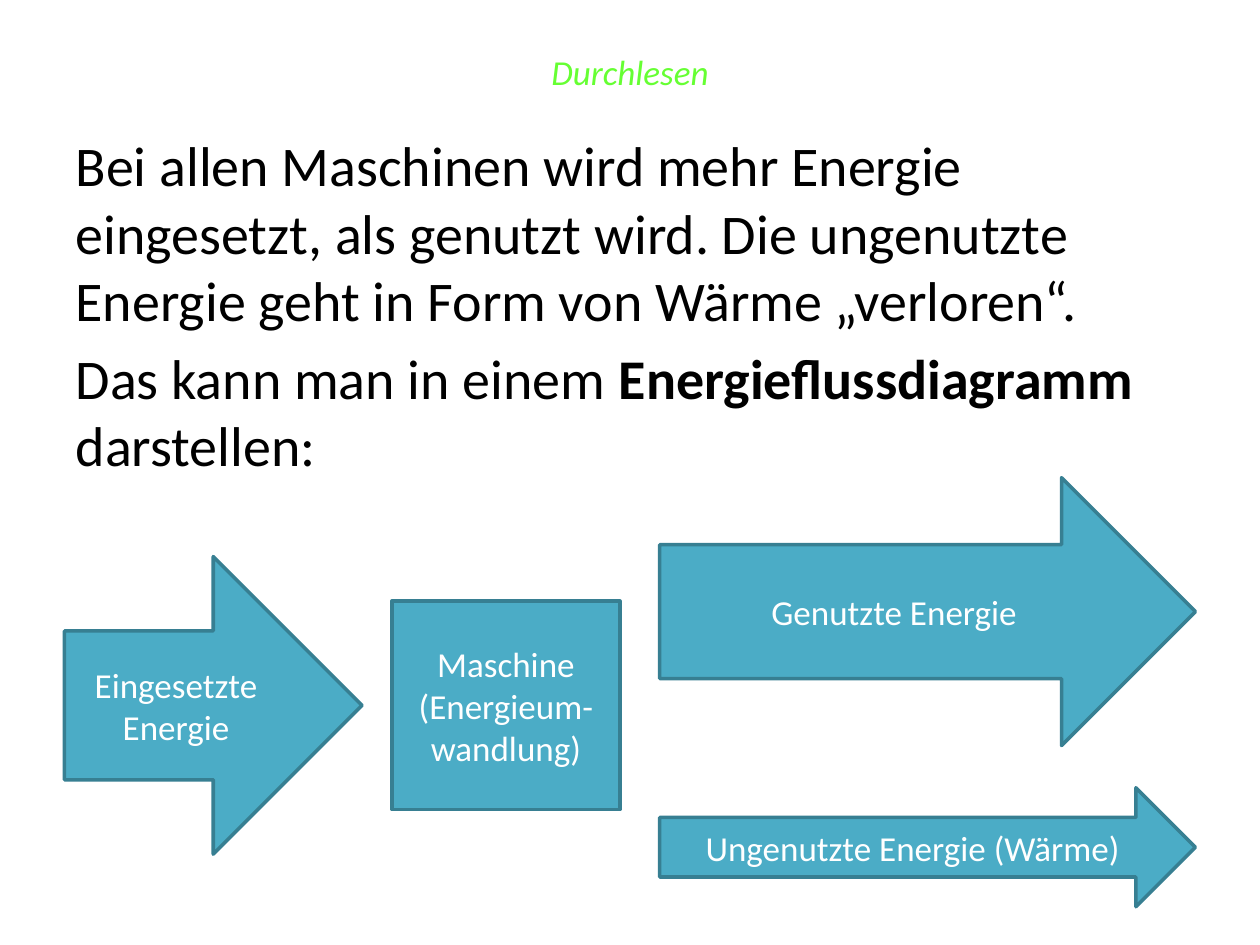
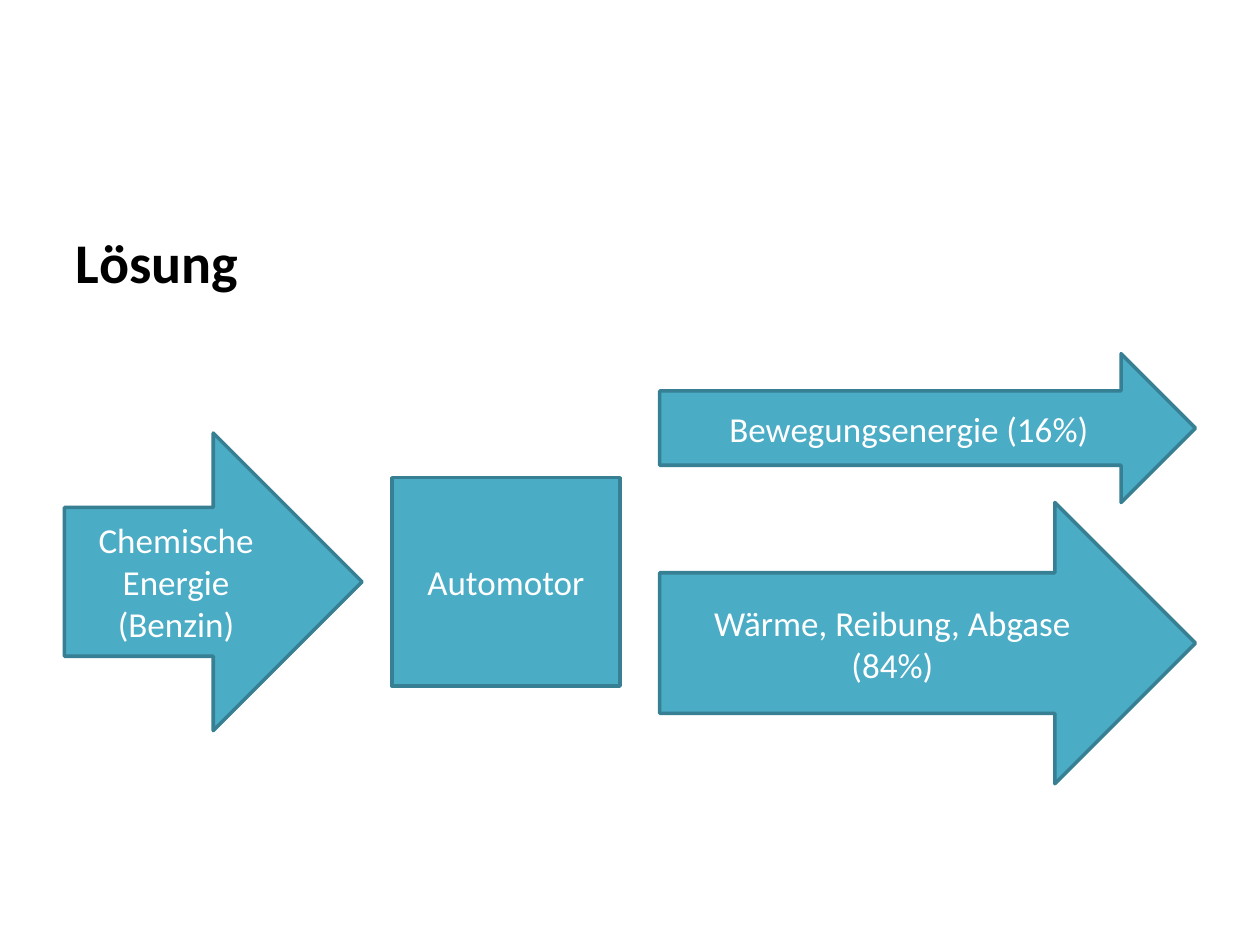
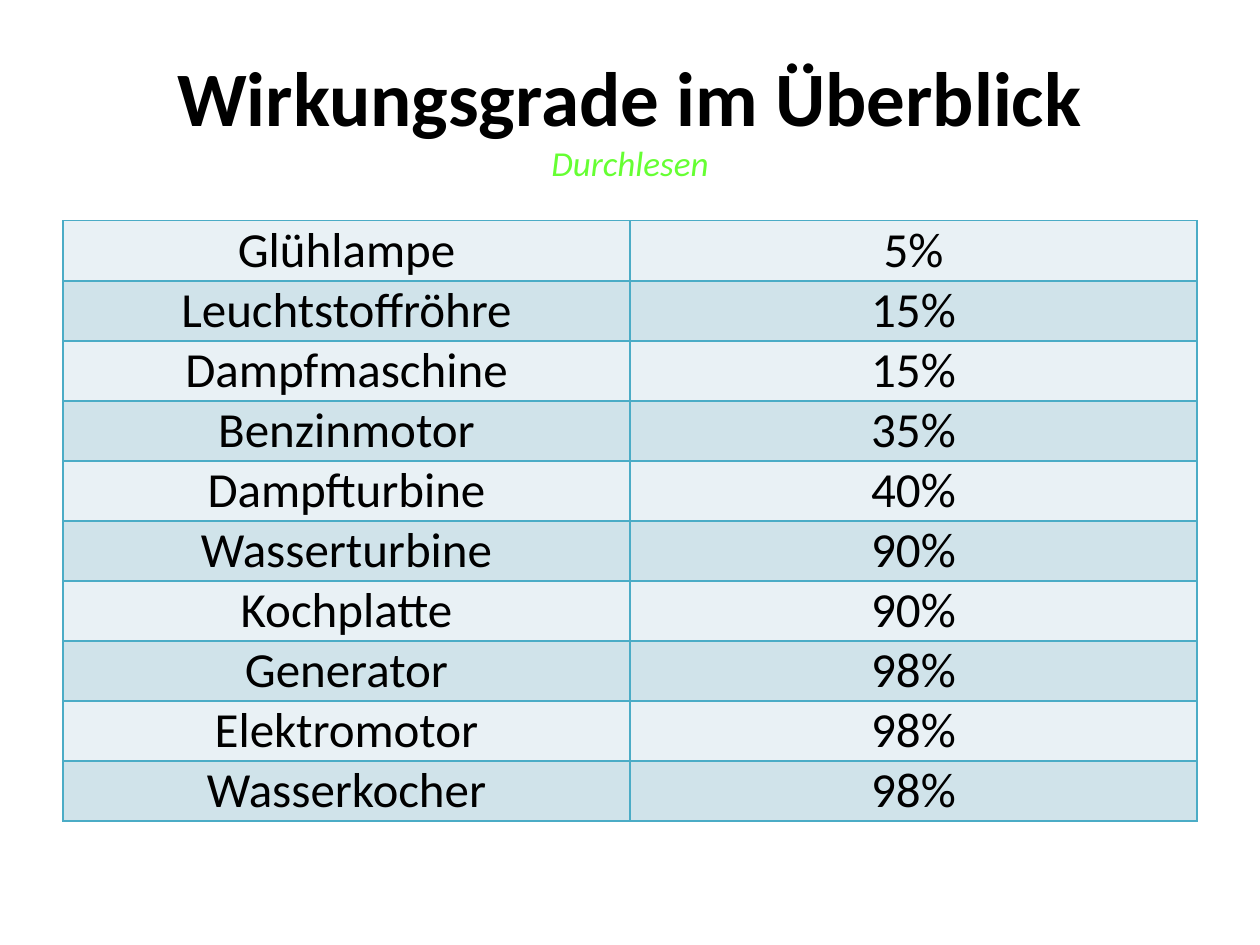
from lxml.etree import SubElement
from pptx import Presentation
from pptx.dml.color import RGBColor
from pptx.enum.shapes import MSO_SHAPE
from pptx.enum.text import MSO_ANCHOR, MSO_AUTO_SIZE, PP_ALIGN
from pptx.oxml.ns import qn
from pptx.util import Cm, Pt

FONT = "Calibri"
BLACK, WHITE, GREEN = "000000", "FFFFFF", "66FF33"
TEAL, DARK_TEAL = "4BACC6", "377F92"
ROW_FILLS = ("E9F1F5", "D0E3EA")
MARGIN, CONTENT_W = 1.27, 22.86
TITLE_TOP = 0.76
INPUT_X, INPUT_SIZE = 1.3, 6
MACHINE_X, MACHINE_W, MACHINE_H = 7.9, 4.6, 4.2
OUTPUT_X, OUTPUT_W = 13.3, 10.8
ROW_H = 1.21

EFFICIENCIES = [
    ("Glühlampe", "5%"),
    ("Leuchtstoffröhre", "15%"),
    ("Dampfmaschine", "15%"),
    ("Benzinmotor", "35%"),
    ("Dampfturbine", "40%"),
    ("Wasserturbine", "90%"),
    ("Kochplatte", "90%"),
    ("Generator", "98%"),
    ("Elektromotor", "98%"),
    ("Wasserkocher", "98%"),
]


def rgb(color):
    return RGBColor.from_string(color)


def add_run(p, text, size, color=BLACK, bold=False, italic=False):
    r = p.add_run()
    r.text = text
    r.font.name = FONT
    r.font.size = Pt(size)
    r.font.bold = bold
    r.font.italic = italic
    r.font.color.rgb = rgb(color)


def place(sp, top, height):
    sp.left, sp.top = Cm(MARGIN), Cm(top)
    sp.width, sp.height = Cm(CONTENT_W), Cm(height)
    sp.text_frame.auto_size = MSO_AUTO_SIZE.NONE


def set_title(s, height, heading=None):
    sp = s.shapes.title
    place(sp, TITLE_TOP, height)
    sp.text_frame.vertical_anchor = MSO_ANCHOR.MIDDLE
    p = sp.text_frame.paragraphs[0]
    p.alignment = PP_ALIGN.CENTER
    if heading:
        add_run(p, heading, 44, bold=True)
        p.add_line_break()
    add_run(p, "Durchlesen", 20, GREEN, italic=True)


def set_body(s, top, height, paragraphs):
    sp = s.placeholders[1]
    place(sp, top, height)
    tf = sp.text_frame
    for i, runs in enumerate(paragraphs):
        p = tf.add_paragraph() if i else tf.paragraphs[0]
        pPr = p._p.get_or_add_pPr()
        pPr.set("marL", "0")
        pPr.set("indent", "0")
        SubElement(pPr, qn("a:buNone"))
        for text, bold in runs:
            add_run(p, text, 32, bold=bold)


def add_block(s, kind, left, top, width, height, text):
    sp = s.shapes.add_shape(kind, Cm(left), Cm(top), Cm(width), Cm(height))
    sp.shadow.inherit = False
    sp.fill.solid()
    sp.fill.fore_color.rgb = rgb(TEAL)
    sp.line.color.rgb = rgb(DARK_TEAL)
    sp.line.width = Pt(2)
    tf = sp.text_frame
    tf.word_wrap = True
    tf.vertical_anchor = MSO_ANCHOR.MIDDLE
    p = tf.paragraphs[0]
    p.alignment = PP_ALIGN.CENTER
    add_run(p, text, 20, WHITE)


def add_energy_flow(s, axis, source, machine, outputs):
    arrow = MSO_SHAPE.RIGHT_ARROW
    add_block(s, arrow, INPUT_X, axis - INPUT_SIZE / 2, INPUT_SIZE, INPUT_SIZE, source)
    add_block(s, MSO_SHAPE.RECTANGLE, MACHINE_X, axis - MACHINE_H / 2,
              MACHINE_W, MACHINE_H, machine)
    for text, top, height in outputs:
        add_block(s, arrow, OUTPUT_X, top, OUTPUT_W, height, text)


def set_borders(cell):
    tcPr = cell._tc.get_or_add_tcPr()
    for side in ("lnL", "lnR", "lnT", "lnB"):
        ln = SubElement(tcPr, qn(f"a:{side}"), w=str(Pt(1)))
        fill = SubElement(ln, qn("a:solidFill"))
        SubElement(fill, qn("a:srgbClr"), val=TEAL)


def fill_cell(cell, text, color):
    set_borders(cell)
    cell.fill.solid()
    cell.fill.fore_color.rgb = rgb(color)
    cell.margin_left = cell.margin_right = Cm(0.18)
    cell.margin_top = cell.margin_bottom = 0
    p = cell.text_frame.paragraphs[0]
    p.alignment = PP_ALIGN.CENTER
    add_run(p, text, 28)


def add_efficiency_table(s, top, rows):
    table = s.shapes.add_table(len(rows), 2, Cm(MARGIN), Cm(top),
                               Cm(CONTENT_W), Cm(ROW_H * len(rows))).table
    table.first_row = table.horz_banding = False
    for i, values in enumerate(rows):
        table.rows[i].height = Cm(ROW_H)
        for j, value in enumerate(values):
            fill_cell(table.cell(i, j), value, ROW_FILLS[i % 2])


def add_principle_slide(prs):
    s = prs.slides.add_slide(prs.slide_layouts[1])
    set_title(s, 1.37)
    set_body(s, 2.51, 14.5, [
        [("Bei allen Maschinen wird mehr Energie eingesetzt, als genutzt wird. "
          "Die ungenutzte Energie geht in Form von Wärme „verloren“.", False)],
        [("Das kann man in einem ", False), ("Energieflussdiagramm ", True),
         ("darstellen:", False)],
    ])
    add_energy_flow(s, 14.22, "Eingesetzte Energie", "Maschine (Energieum-wandlung)", [
        ("Genutzte Energie", 9.63, 5.4),
        ("Ungenutzte Energie (Wärme)", 15.88, 2.4),
    ])


def add_solution_slide(prs):
    s = prs.slides.add_slide(prs.slide_layouts[1])
    title = s.shapes.title.element
    title.getparent().remove(title)
    set_body(s, 4.45, 12.57, [[("Lösung", True)]])
    add_energy_flow(s, 11.73, "Chemische Energie (Benzin)", "Automotor", [
        ("Bewegungsenergie (16%)", 7.13, 3),
        ("Wärme, Reibung, Abgase (84%)", 10.13, 5.67),
    ])


def add_overview_slide(prs):
    s = prs.slides.add_slide(prs.slide_layouts[5])
    set_title(s, 3.18, "Wirkungsgrade im Überblick")
    add_efficiency_table(s, 4.45, EFFICIENCIES)


def main():
    prs = Presentation()
    prs.slide_width, prs.slide_height = Cm(25.4), Cm(19.05)
    add_principle_slide(prs)
    add_solution_slide(prs)
    add_overview_slide(prs)
    prs.save("out.pptx")


if __name__ == "__main__":
    main()
